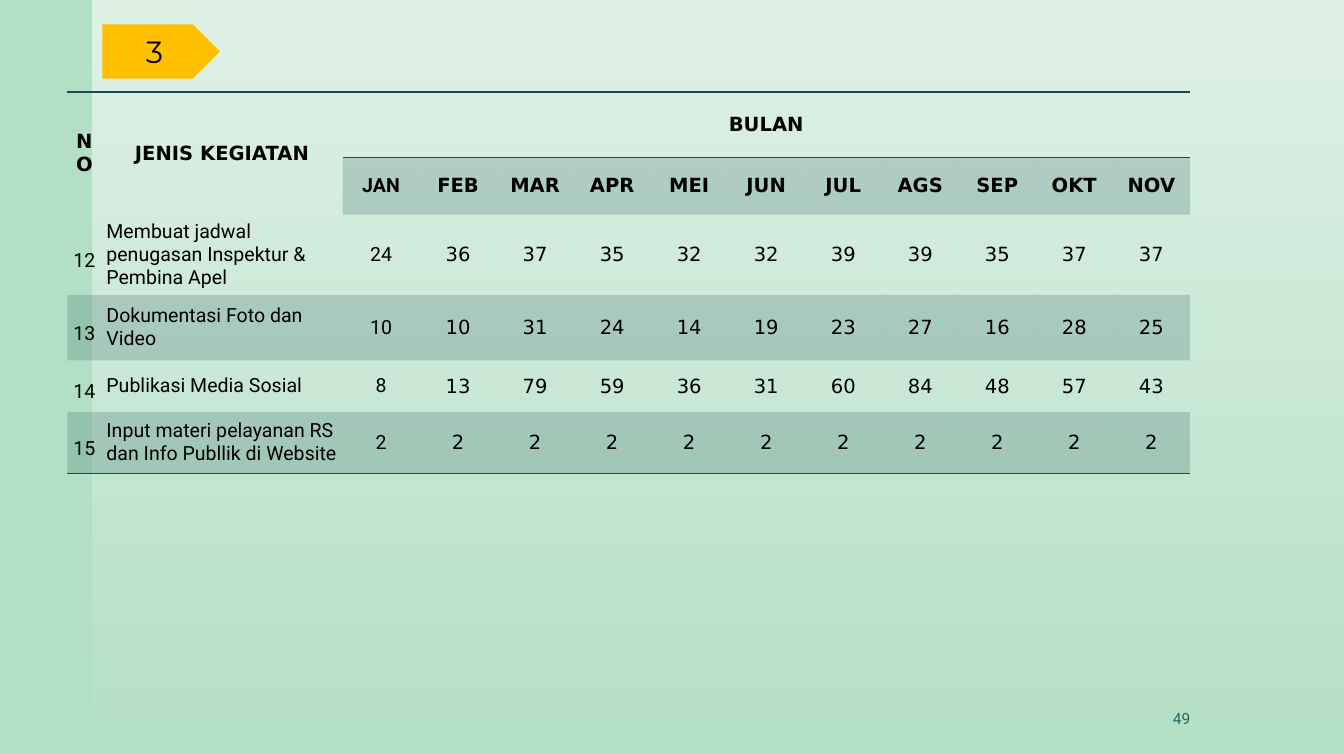
"""Builds a slide with a monthly activity table."""
from lxml.etree import SubElement
from pptx import Presentation
from pptx.dml.color import RGBColor
from pptx.enum.shapes import MSO_SHAPE
from pptx.enum.text import MSO_ANCHOR, PP_ALIGN
from pptx.oxml import parse_xml
from pptx.oxml.ns import nsdecls, qn
from pptx.util import Pt

SECTION, PAGE = "3", "49"
MONTHS = ["JAN", "FEB", "MAR", "APR", "MEI", "JUN", "JUL", "AGS", "SEP", "OKT", "NOV"]
ACTIVITIES = [
    ("12", "Membuat jadwal penugasan Inspektur & Pembina Apel",
     [24, 36, 37, 35, 32, 32, 39, 39, 35, 37, 37]),
    ("13", "Dokumentasi Foto dan Video",
     [10, 10, 31, 24, 14, 19, 23, 27, 16, 28, 25]),
    ("14", "Publikasi Media Sosial",
     [8, 13, 79, 59, 36, 31, 60, 84, 48, 57, 43]),
    ("15", "Input materi pelayanan RS dan Info Publlik di Website", [2] * 11),
]
ROW_HEIGHTS = [47, 40, 57, 47, 37, 44]
COL_WIDTHS = [24.5, 173] + [55.25] * len(MONTHS)
BLACK, TEAL = "000000", "164B4F"
ROBOTO, DEJAVU = "Roboto", "DejaVu Sans"


def rgb(color):
    return RGBColor.from_string(color)


def set_alpha(fill_xml, percents):
    for clr, percent in zip(fill_xml.iter(qn("a:srgbClr")), percents):
        SubElement(clr, qn("a:alpha")).set("val", str(percent * 1000))


def write(tf, text, size, font, color=BLACK, align=PP_ALIGN.CENTER, bold=False):
    p = tf.paragraphs[0]
    p.text = text
    p.alignment = align
    p.font.size, p.font.name, p.font.bold = Pt(size), font, bold
    p.font.color.rgb = rgb(color)
    return p


def add_shape(s, kind, left, top, width, height):
    sp = s.shapes.add_shape(kind, Pt(left), Pt(top), Pt(width), Pt(height))
    sp.shadow.inherit = False
    sp.line.fill.background()
    return sp


def add_border(cell, side):
    cell._tc.get_or_add_tcPr().insert(0, parse_xml(
        f'<a:ln{side} {nsdecls("a")} w="12700"><a:solidFill>'
        f'<a:srgbClr val="{TEAL}"/></a:solidFill></a:ln{side}>'))


def style_cell(cell, row, col, text):
    header, last = row < 2, row == len(ROW_HEIGHTS) - 1
    cell.vertical_anchor = MSO_ANCHOR.MIDDLE
    cell.margin_left = cell.margin_right = cell.margin_top = cell.margin_bottom = Pt(3.6)
    if last or (row == 0 and col > 1) or (row == 1 and col < 2):
        add_border(cell, "B")
    if row == 0:
        add_border(cell, "T")
    if row % 2 and (row > 1 or col > 1):
        cell.fill.solid()
        cell.fill.fore_color.rgb = rgb(TEAL)
        set_alpha(cell._tc.tcPr.find(qn("a:solidFill")), [20])
    else:
        cell.fill.background()
    if text:
        roboto = col < 3 and not header or (row, col) == (1, 2)
        align = PP_ALIGN.LEFT if col == 1 and not header else PP_ALIGN.CENTER
        p = write(cell.text_frame, text, 14, ROBOTO if roboto else DEJAVU,
                  align=align, bold=header)
        if col == 0 and not header:
            p.line_spacing = 1.5


def add_schedule(s):
    blanks = [""] * (len(MONTHS) - 1)
    rows = [["NO", "JENIS KEGIATAN", "BULAN"] + blanks, ["", ""] + MONTHS]
    rows += [[no, name] + [str(v) for v in values] for no, name, values in ACTIVITIES]
    frame = s.shapes.add_table(len(rows), len(COL_WIDTHS), Pt(48.25), Pt(66),
                               Pt(sum(COL_WIDTHS)), Pt(sum(ROW_HEIGHTS)))
    table = frame.table
    table.first_row = table.horz_banding = False
    style = table._tbl.tblPr.find(qn("a:tableStyleId"))
    style.text = "{2D5ABB26-0587-4C30-8999-92F81FD0307C}"
    for column, width in zip(table.columns, COL_WIDTHS):
        column.width = Pt(width)
    for table_row, height in zip(table.rows, ROW_HEIGHTS):
        table_row.height = Pt(height)
    for i, row in enumerate(rows):
        for j, text in enumerate(row):
            style_cell(table.cell(i, j), i, j, text)
    for j in range(2):
        table.cell(0, j).merge(table.cell(1, j))
    table.cell(0, 2).merge(table.cell(0, len(COL_WIDTHS) - 1))


def main():
    prs = Presentation()
    prs.slide_width, prs.slide_height = Pt(964), Pt(540)
    s = prs.slides.add_slide(prs.slide_layouts[6])
    s.background.fill.solid()
    s.background.fill.fore_color.rgb = rgb("B3E0C5")

    panel = add_shape(s, MSO_SHAPE.RECTANGLE, 66, 0, 898, 540)
    panel.fill.gradient()
    panel.fill.gradient_angle = 270
    for stop, position in zip(panel.fill.gradient_stops, (0, 1)):
        stop.color.rgb = rgb("FFFFFF")
        stop.position = position
    set_alpha(panel._element.spPr.find(qn("a:gradFill")), [60, 0])

    number = s.shapes.add_textbox(Pt(636.5), Pt(500.5), Pt(224.5), Pt(29))
    number.text_frame.word_wrap = True
    number.text_frame.vertical_anchor = MSO_ANCHOR.MIDDLE
    write(number.text_frame, PAGE, 11.1, ROBOTO, "1F696F", PP_ALIGN.RIGHT)

    add_schedule(s)

    tag = add_shape(s, MSO_SHAPE.PENTAGON, 73.5, 17.5, 84.25, 39)
    tag.fill.solid()
    tag.fill.fore_color.rgb = rgb("FFC000")
    tag.text_frame.vertical_anchor = MSO_ANCHOR.MIDDLE
    write(tag.text_frame, SECTION, 22, "Montserrat")
    prs.save("out.pptx")


if __name__ == "__main__":
    main()
